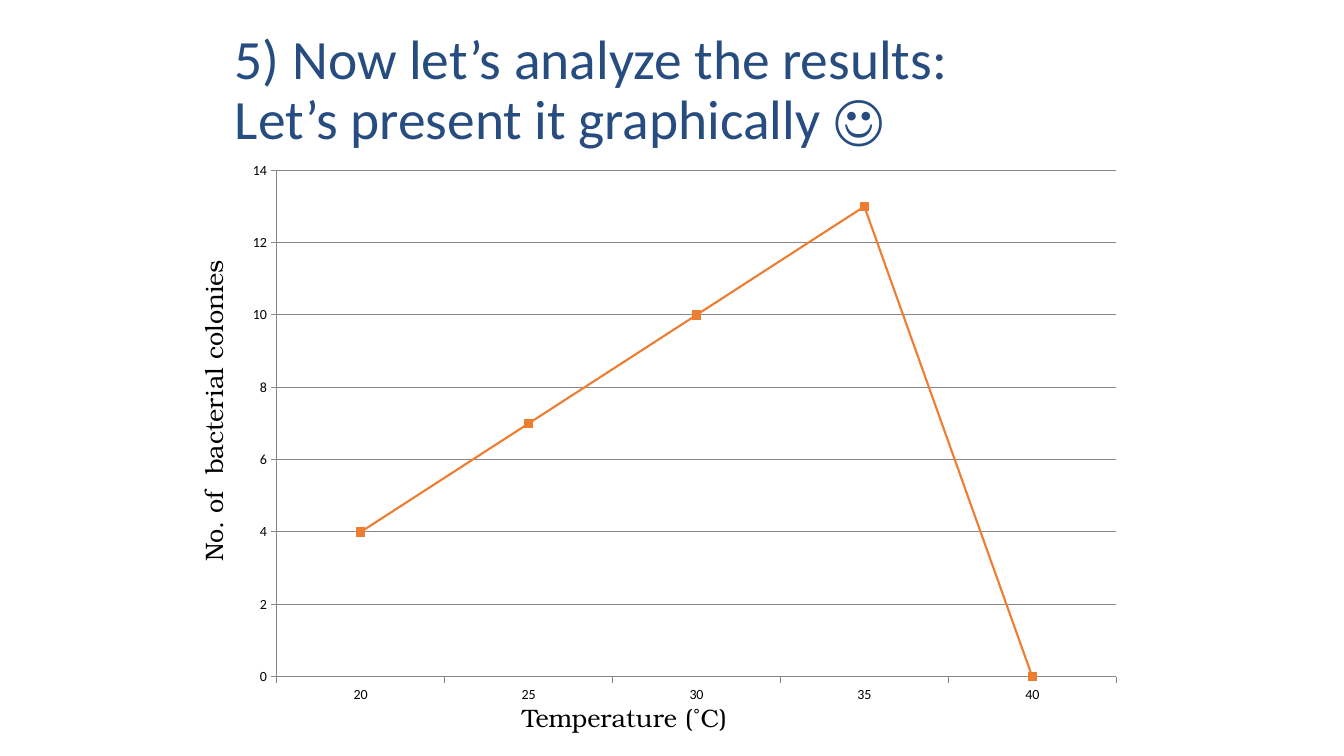
from pptx import Presentation
from pptx.chart.data import CategoryChartData
from pptx.dml.color import RGBColor as RGB
from pptx.enum.chart import XL_CHART_TYPE as ChartType
from pptx.enum.chart import XL_MARKER_STYLE as Marker
from pptx.enum.chart import XL_TICK_MARK as Tick
from pptx.enum.text import MSO_ANCHOR as Anchor
from pptx.util import Inches, Pt

TITLE = ["5) Now let’s analyze the results:", "Let’s present it graphically ☺"]
TITLE_BOX = (2.17, 0.28, 9, 1.25)
TEMPERATURES = ["20", "25", "30", "35", "40"]
COLONIES = [4, 7, 10, 13, 0]
CHART_BOX = (2.33, 1.5, 8.92, 5.58)
Y_TITLE = "No. of  bacterial colonies"
Y_TITLE_BOX = (1.92, 2.42, 0.5, 3.25)
X_TITLE = "Temperature (˚C)"
X_TITLE_BOX = (5.08, 6.92, 2.67, 0.4)

THEME = {
    "sans": "Calibri", "serif": "TeX Gyre Bonum",
    "title": RGB(0x26, 0x4C, 0x80), "text": RGB(0, 0, 0),
    "series": RGB(0xED, 0x7D, 0x31), "axis": RGB(0x87, 0x87, 0x87),
    "title_size": Pt(39.6), "label_size": Pt(18), "tick_size": Pt(10),
}


def set_font(font, name, size, color):
    font.name = THEME[name]
    font.size = THEME[size]
    font.color.rgb = THEME[color]


def set_line(line, color, width):
    line.color.rgb = THEME[color]
    line.width = Pt(width)


def add_text(slide, box, text, name, size, color):
    sp = slide.shapes.add_textbox(*map(Inches, box))
    tf = sp.text_frame
    tf.word_wrap = True
    p = tf.paragraphs[0]
    p.text = text
    set_font(p.font, name, size, color)
    return sp


def add_line_chart(slide):
    data = CategoryChartData()
    data.categories = TEMPERATURES
    data.add_series("Series 1", COLONIES)
    frame = slide.shapes.add_chart(
        ChartType.LINE_MARKERS, *map(Inches, CHART_BOX), data)
    chart = frame.chart
    chart.has_legend = False
    chart.has_title = False
    set_font(chart.font, "sans", "tick_size", "text")
    for axis in (chart.category_axis, chart.value_axis):
        axis.major_tick_mark = Tick.OUTSIDE
        axis.minor_tick_mark = Tick.NONE
        set_line(axis.format.line, "axis", 0.75)
    values = chart.value_axis
    values.minimum_scale, values.maximum_scale, values.major_unit = 0, 14, 2
    values.has_major_gridlines = True
    set_line(values.major_gridlines.format.line, "axis", 0.75)
    plot = chart.plots[0]
    plot.vary_by_categories = False
    series = plot.series[0]
    series.smooth = False
    set_line(series.format.line, "series", 1.5)
    series.marker.style = Marker.SQUARE
    series.marker.size = 6
    fill = series.marker.format.fill
    fill.solid()
    fill.fore_color.rgb = THEME["series"]
    series.marker.format.line.fill.background()


def main():
    prs = Presentation()
    prs.slide_width, prs.slide_height = Inches(13.33), Inches(7.5)
    slide = prs.slides.add_slide(prs.slide_layouts[6])

    title = add_text(slide, TITLE_BOX, "\v".join(TITLE),
                     "sans", "title_size", "title")
    tf = title.text_frame
    tf.vertical_anchor = Anchor.MIDDLE
    tf.margin_left = Inches(0.16)
    tf.paragraphs[0].line_spacing = 0.9

    add_line_chart(slide)

    y_title = add_text(slide, Y_TITLE_BOX, Y_TITLE,
                       "serif", "label_size", "text")
    y_title.rotation = 180
    y_title.text_frame._txBody.bodyPr.set("vert", "eaVert")
    add_text(slide, X_TITLE_BOX, X_TITLE, "serif", "label_size", "text")

    prs.save("out.pptx")


if __name__ == "__main__":
    main()
